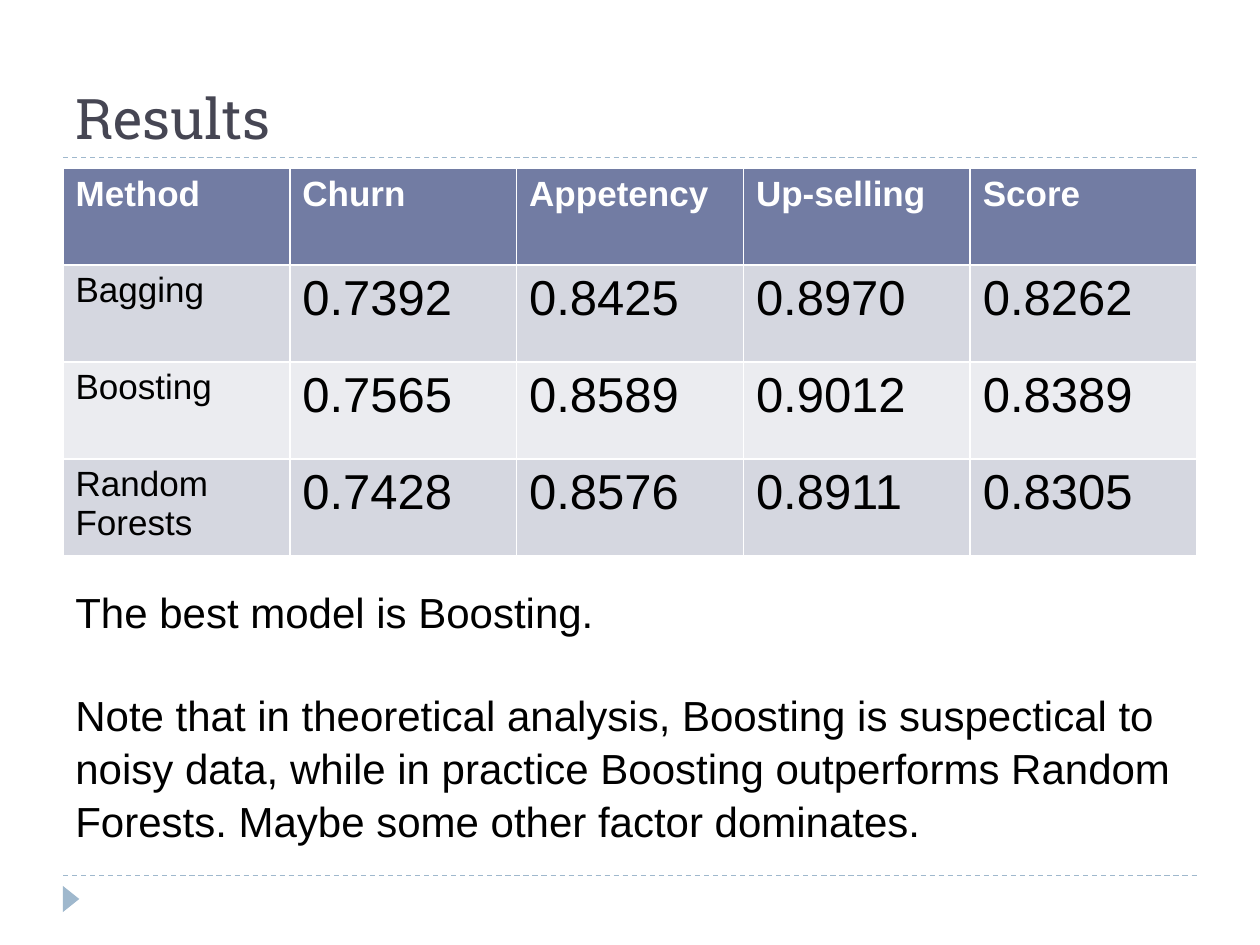
from lxml.etree import SubElement
from pptx import Presentation
from pptx.dml.color import RGBColor
from pptx.enum.dml import MSO_LINE
from pptx.enum.shapes import MSO_CONNECTOR, MSO_SHAPE
from pptx.enum.text import MSO_ANCHOR, PP_ALIGN
from pptx.oxml.ns import qn
from pptx.util import Pt

ACCENT = RGBColor(0x9F, 0xB8, 0xCD)
TITLE = RGBColor(0x46, 0x46, 0x53)
HEADER = RGBColor(0x72, 0x7C, 0xA3)
BAND_DARK = RGBColor(0xD5, 0xD7, 0xE0)
BAND_LIGHT = RGBColor(0xEB, 0xEC, 0xF0)
WHITE = RGBColor(0xFF, 0xFF, 0xFF)
BLACK = RGBColor(0x00, 0x00, 0x00)

RESULTS = [
    ("Method", "Churn", "Appetency", "Up-selling", "Score"),
    ("Bagging", "0.7392", "0.8425", "0.8970", "0.8262"),
    ("Boosting", "0.7565", "0.8589", "0.9012", "0.8389"),
    ("Random Forests", "0.7428", "0.8576", "0.8911", "0.8305"),
]
CONCLUSIONS = [
    "The best model is Boosting.",
    "Note that in theoretical analysis, Boosting is suspectical to noisy data, "
    "while in practice Boosting outperforms Random Forests. "
    "Maybe some other factor dominates.",
]
LEFT, WIDTH = 36, 648


def style_font(font, name, size, color, bold=False):
    font.name = name
    font.size = Pt(size)
    font.color.rgb = color
    font.bold = bold


prs = Presentation()
prs.slide_width, prs.slide_height = Pt(720), Pt(540)
slide = prs.slides.add_slide(prs.slide_layouts[5])
shapes = slide.shapes

for y in (500.4, 90):
    rule = shapes.add_connector(
        MSO_CONNECTOR.STRAIGHT, Pt(LEFT), Pt(y), Pt(LEFT + WIDTH), Pt(y))
    rule.line.color.rgb = ACCENT
    rule.line.width = Pt(0.75)
    rule.line.dash_style = MSO_LINE.DASH
    SubElement(rule._element.spPr, qn("a:effectLst"))

marker = shapes.add_shape(
    MSO_SHAPE.ISOSCELES_TRIANGLE, Pt(33.1), Pt(509), Pt(15), Pt(9.4))
marker.rotation = 90
marker.shadow.inherit = False
marker.fill.solid()
marker.fill.fore_color.rgb = ACCENT
marker.line.fill.background()

heading = shapes.title
heading.left, heading.top = Pt(LEFT), Pt(12.24)
heading.width, heading.height = Pt(WIDTH), Pt(77.76)
heading.text_frame.text = "Results"
heading.text_frame.vertical_anchor = MSO_ANCHOR.BOTTOM
heading_line = heading.text_frame.paragraphs[0]
heading_line.alignment = PP_ALIGN.LEFT
style_font(heading_line.font, "Roboto Slab", 32, TITLE)

scores = shapes.add_table(
    len(RESULTS), len(RESULTS[0]), Pt(LEFT), Pt(96), Pt(WIDTH), Pt(221.76)).table
for r, row in enumerate(RESULTS):
    for c, value in enumerate(row):
        cell = scores.cell(r, c)
        cell.text = value
        cell.fill.solid()
        cell.fill.fore_color.rgb = (
            HEADER if r == 0 else BAND_DARK if r % 2 else BAND_LIGHT)
        style_font(cell.text_frame.paragraphs[0].font, "Arial",
                   28 if r and c else 20, BLACK if r else WHITE, r == 0)

remarks = shapes.add_textbox(Pt(LEFT), Pt(330), Pt(642), Pt(152.6)).text_frame
remarks.word_wrap = True
remarks.text = "\n".join(CONCLUSIONS)
for remark in remarks.paragraphs:
    remark.line_spacing = 1.05
    style_font(remark.font, "Arial", 24, BLACK)
remarks.paragraphs[1].space_before = Pt(29)

prs.save("out.pptx")
